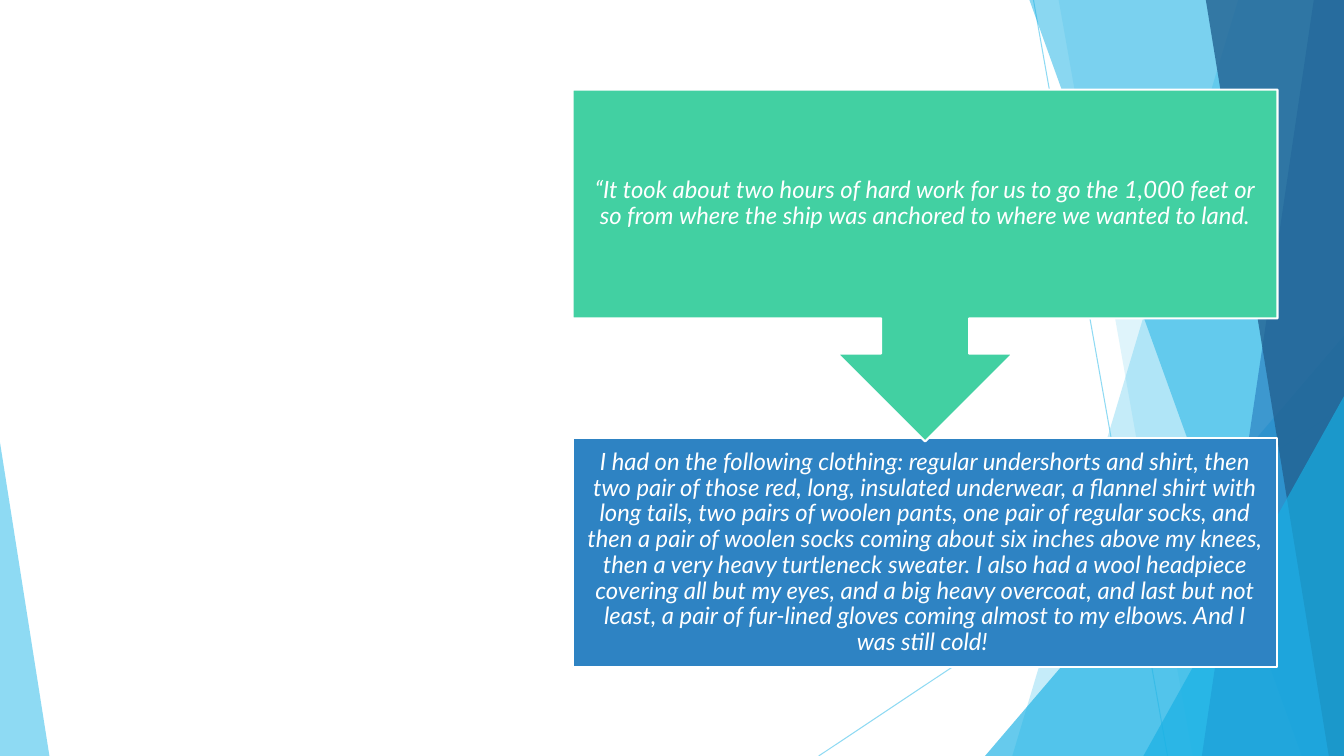
from lxml.etree import SubElement
from pptx import Presentation
from pptx.dml.color import RGBColor
from pptx.enum.shapes import MSO_CONNECTOR, MSO_SHAPE
from pptx.enum.text import MSO_ANCHOR, PP_ALIGN
from pptx.oxml.ns import qn
from pptx.util import Inches, Pt

WHITE = RGBColor(0xFF, 0xFF, 0xFF)
SKY = RGBColor(0x5F, 0xCB, 0xEF)
CYAN = RGBColor(0x17, 0xB0, 0xE4)
BLUE = RGBColor(0x2E, 0x83, 0xC3)
NAVY = RGBColor(0x22, 0x62, 0x92)
GREEN = RGBColor(0x42, 0xD0, 0xA2)

PAGE_WIDTH, PAGE_HEIGHT = 13.33, 7.5

LANDING = (
    "“It took about two hours of hard work for us to go the 1,000 feet or so "
    "from where the ship was anchored to where we wanted to land."
)
CLOTHING = (
    "I had on the following clothing: regular undershorts and shirt, then two pair "
    "of those red, long, insulated underwear, a flannel shirt with long tails, two "
    "pairs of woolen pants, one pair of regular socks, and then a pair of woolen "
    "socks coming about six inches above my knees, then a very heavy turtleneck "
    "sweater. I also had a wool headpiece covering all but my eyes, and a big heavy "
    "overcoat, and last but not least, a pair of fur-lined gloves coming almost to "
    "my elbows. And I was still cold! "
)

# Start x, start y, end x, end y
RAYS = [(10.25, 0, 11.58, PAGE_HEIGHT), (PAGE_WIDTH, 4.03, 8.12, PAGE_HEIGHT)]

# Bands reach the right edge: (top x, bottom x)
# Triangles stand on the bottom edge: (left, top, width, apex position)
FACETS = [
    ("band", (12.28, 10.04), SKY, 36),
    ("band", (10.5, 11.83), SKY, 20),
    ("triangle", (9.77, 3.33, 3.56, 1), CYAN, 66),
    ("band", (10.21, 12.91), CYAN, 50),
    ("band", (13.03, 11.92), BLUE, 70),
    ("band", (11.96, 13.18), NAVY, 80),
    ("triangle", (11.34, 3.93, 1.99, 1), CYAN, 66),
    ("triangle", (0, 4.39, 0.49, 0), SKY, 70),
]

STEP_LEFT, STEP_WIDTH, STEP_HEIGHT = 5.68, 6.99, 2.27
CALLOUT_TOP, CALLOUT_HEIGHT = 0.89, 3.49
CLOTHING_TOP = 4.35


def set_opacity(color_parent, percent):
    color = color_parent.find(".//" + qn("a:srgbClr"))
    SubElement(color, qn("a:alpha")).set("val", str(percent * 1000))


def draw_ray(page, x1, y1, x2, y2):
    ray = page.shapes.add_connector(
        MSO_CONNECTOR.STRAIGHT, Inches(x1), Inches(y1), Inches(x2), Inches(y2))
    ray.line.color.rgb = SKY
    ray.line.width = Pt(0.75)
    properties = ray._element.spPr
    set_opacity(properties, 70)
    SubElement(properties, qn("a:effectLst"))


def draw_band(page, top_x, bottom_x):
    builder = page.shapes.build_freeform(Inches(top_x), 0)
    corners = [(PAGE_WIDTH, 0), (PAGE_WIDTH, PAGE_HEIGHT), (bottom_x, PAGE_HEIGHT)]
    builder.add_line_segments([(Inches(x), Inches(y)) for x, y in corners])
    return builder.convert_to_shape()


def draw_triangle(page, left, top, width, apex):
    triangle = page.shapes.add_shape(
        MSO_SHAPE.ISOSCELES_TRIANGLE, Inches(left), Inches(top),
        Inches(width), Inches(PAGE_HEIGHT - top))
    triangle.adjustments[0] = apex
    return triangle


def draw_facet(page, kind, geometry, color, opacity):
    draw = draw_band if kind == "band" else draw_triangle
    facet = draw(page, *geometry)
    facet.shadow.inherit = False
    facet.fill.solid()
    facet.fill.fore_color.rgb = color
    set_opacity(facet._element.spPr, opacity)
    facet.line.fill.background()


def draw_step(page, preset, top, height, color):
    step = page.shapes.add_shape(
        preset, Inches(STEP_LEFT), Inches(top), Inches(STEP_WIDTH), Inches(height))
    step.shadow.inherit = False
    step.fill.solid()
    step.fill.fore_color.rgb = color
    step.line.color.rgb = WHITE
    step.line.width = Pt(1.5)
    return step


def write_quote(shape, text):
    frame = shape.text_frame
    frame.word_wrap = True
    frame.vertical_anchor = MSO_ANCHOR.MIDDLE
    frame.margin_left = frame.margin_right = Inches(0.13)
    frame.margin_top = frame.margin_bottom = Inches(0.13)
    para = frame.paragraphs[0]
    para.alignment = PP_ALIGN.CENTER
    para.line_spacing = 0.9
    span = para.add_run()
    span.text = text
    span.font.name = "Lato"
    span.font.size = Pt(17)
    span.font.italic = True
    span.font.color.rgb = WHITE


def main():
    deck = Presentation()
    deck.slide_width = Inches(PAGE_WIDTH)
    deck.slide_height = Inches(PAGE_HEIGHT)
    page = deck.slides.add_slide(deck.slide_layouts[6])

    for ray in RAYS:
        draw_ray(page, *ray)
    for facet in FACETS:
        draw_facet(page, *facet)

    clothing = draw_step(page, MSO_SHAPE.RECTANGLE, CLOTHING_TOP, STEP_HEIGHT, BLUE)
    write_quote(clothing, CLOTHING)

    # The callout is turned to point down, so its upright text has its own box.
    callout = draw_step(
        page, MSO_SHAPE.UP_ARROW_CALLOUT, CALLOUT_TOP, CALLOUT_HEIGHT, GREEN)
    callout.rotation = 180
    landing = page.shapes.add_textbox(
        Inches(STEP_LEFT), Inches(CALLOUT_TOP), Inches(STEP_WIDTH), Inches(STEP_HEIGHT))
    write_quote(landing, LANDING)

    deck.save("out.pptx")


if __name__ == "__main__":
    main()
